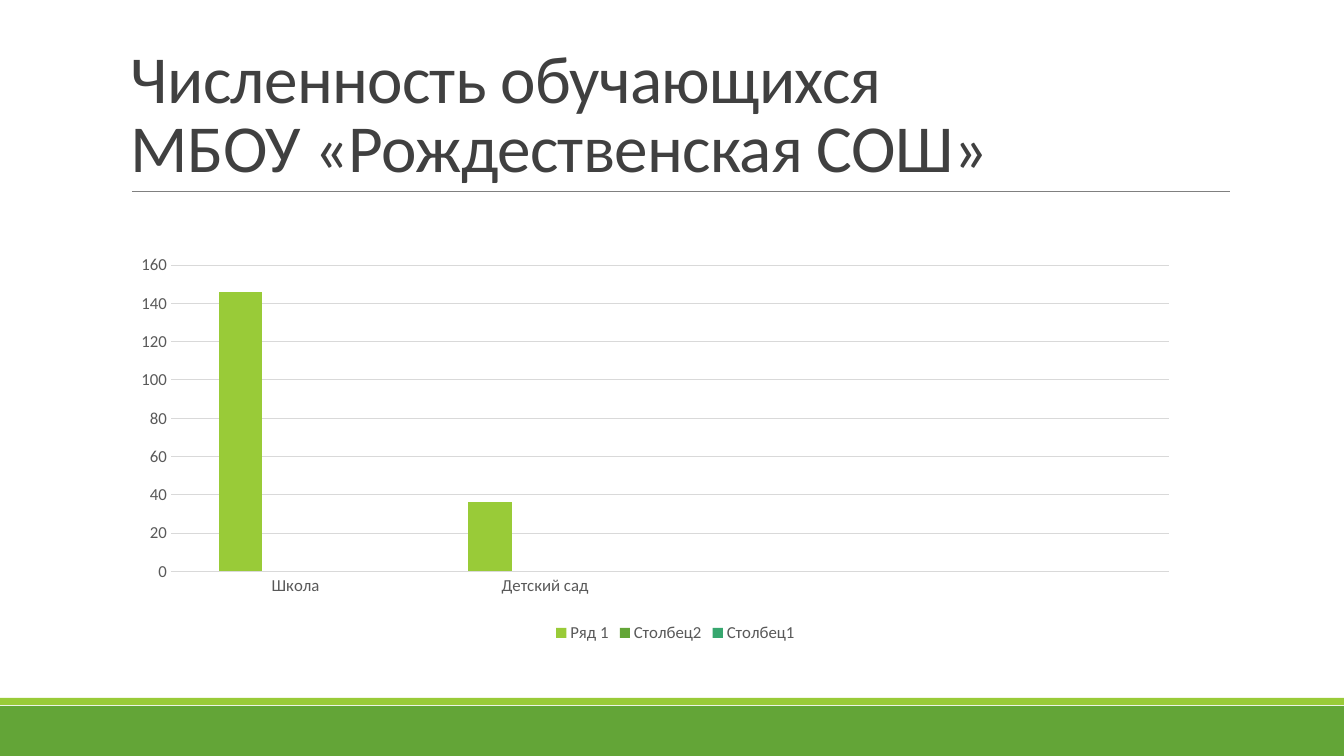
from lxml.etree import SubElement
from pptx import Presentation
from pptx.chart.data import CategoryChartData
from pptx.dml.color import RGBColor
from pptx.enum.chart import XL_CHART_TYPE as ChartType, XL_LEGEND_POSITION as LegendPosition
from pptx.enum.chart import XL_TICK_MARK as TickMark
from pptx.enum.shapes import MSO_CONNECTOR as Connector, MSO_SHAPE as Shape
from pptx.enum.text import MSO_ANCHOR as Anchor
from pptx.oxml.ns import qn
from pptx.util import Emu, Pt

WIDTH, HEIGHT = 1344, 756
COLORS = {
    "green": "63A537", "lime": "99CB38", "teal": "37A76F", "rule": "808080",
    "title": "404040", "label": "595959", "grid": "D9D9D9",
}


class SlideBuilder:
    """Holds the style and the current slide and draws its elements."""

    font_name = "Calibri"
    scale = 12192000 / WIDTH

    def __init__(self, deck):
        deck.slide_width, deck.slide_height = self.lengths(WIDTH, HEIGHT)
        self.page = deck.slides.add_slide(deck.slide_layouts[6])

    def lengths(self, *pixels):
        return [Emu(round(value * self.scale)) for value in pixels]

    def color(self, name):
        return RGBColor.from_string(COLORS[name])

    def style_font(self, font, size, color):
        font.name, font.size = self.font_name, Pt(size)
        font.color.rgb = self.color(color)

    def style_line(self, line, color, width):
        line.color.rgb = self.color(color)
        line.width = Pt(width)

    def band(self, top, height, color):
        box = self.page.shapes.add_shape(Shape.RECTANGLE, *self.lengths(0, top, WIDTH, height))
        box.shadow.inherit = False
        box.fill.solid()
        box.fill.fore_color.rgb = self.color(color)
        box.line.fill.background()

    def rule(self, left, right, top):
        line = self.page.shapes.add_connector(
            Connector.STRAIGHT, *self.lengths(left, top, right, top))
        self.style_line(line.line, "rule", 0.5)
        SubElement(line._element.spPr, qn("a:effectLst"))

    def title(self, text, left, top, width, height):
        box = self.page.shapes.add_textbox(*self.lengths(left, top, width, height))
        frame = box.text_frame
        frame.word_wrap = True
        frame.vertical_anchor = Anchor.BOTTOM
        para = frame.paragraphs[0]
        para.text = text
        para.line_spacing = 0.85
        self.style_font(para.font, 48, "title")
        para._p.pPr.find(qn("a:defRPr")).set("spc", "-50")

    def column_chart(self, categories, series, left, top, width, height):
        data = CategoryChartData()
        data.categories = categories
        for name, values, _ in series:
            data.add_series(name, values)
        chart = self.page.shapes.add_chart(
            ChartType.COLUMN_CLUSTERED, *self.lengths(left, top, width, height), data).chart
        chart.has_title = False
        self.style_font(chart.font, 12, "label")
        chart.has_legend = True
        chart.legend.position = LegendPosition.BOTTOM
        chart.legend.include_in_layout = False
        plot = chart.plots[0]
        plot.gap_width, plot.overlap = 219, -27
        plot.vary_by_categories = False
        for item, (_, _, color) in zip(plot.series, series):
            item.invert_if_negative = False
            item.format.fill.solid()
            item.format.fill.fore_color.rgb = self.color(color)
        for axis in (chart.category_axis, chart.value_axis):
            axis.major_tick_mark = axis.minor_tick_mark = TickMark.NONE
            self.style_font(axis.tick_labels.font, 12, "label")
        self.style_line(chart.category_axis.format.line, "grid", 0.75)
        values_axis = chart.value_axis
        values_axis.minimum_scale, values_axis.maximum_scale = 0, 160
        values_axis.major_unit = 20
        values_axis.format.line.fill.background()
        self.style_line(values_axis.major_gridlines.format.line, "grid", 0.75)
        return chart

    def place_plot(self, chart, **fractions):
        area = chart._chartSpace.chart.plotArea
        for old in area.findall(qn("c:layout")):
            area.remove(old)
        layout = SubElement(area, qn("c:layout"))
        area.insert(0, layout)
        manual = SubElement(layout, qn("c:manualLayout"))
        settings = {"layoutTarget": "inner", "xMode": "edge", "yMode": "edge", **fractions}
        for name, value in settings.items():
            SubElement(manual, qn(f"c:{name}")).set("val", str(value))


def main():
    deck = Presentation()
    slide = SlideBuilder(deck)
    slide.band(706, 50, "green")
    slide.band(698, 7, "lime")
    slide.rule(132, 1230, 191)
    slide.title("Численность обучающихся \vМБОУ «Рождественская СОШ»", 121, 31, 1109, 160)
    empty = [None] * 4
    series = [
        ("Ряд 1", [146, 36, None, None], "lime"),
        ("Столбец2", empty, "green"),
        ("Столбец1", empty, "teal"),
    ]
    chart = slide.column_chart(["Школа", "Детский сад", "", ""], series, 121, 203, 1109, 444)
    slide.place_plot(chart, x=0.045, y=0.14, w=0.9, h=0.69)
    deck.save("out.pptx")


if __name__ == "__main__":
    main()
